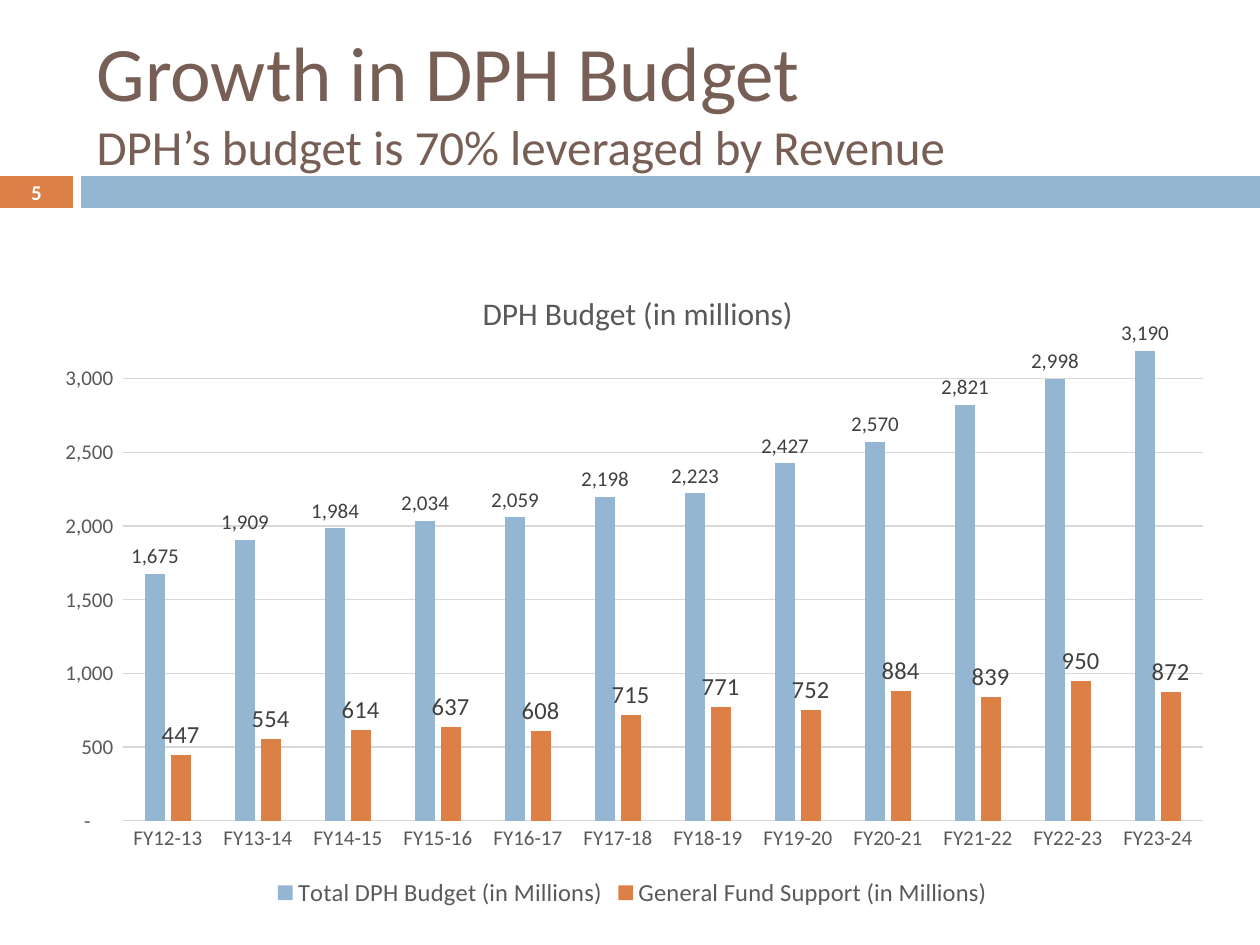
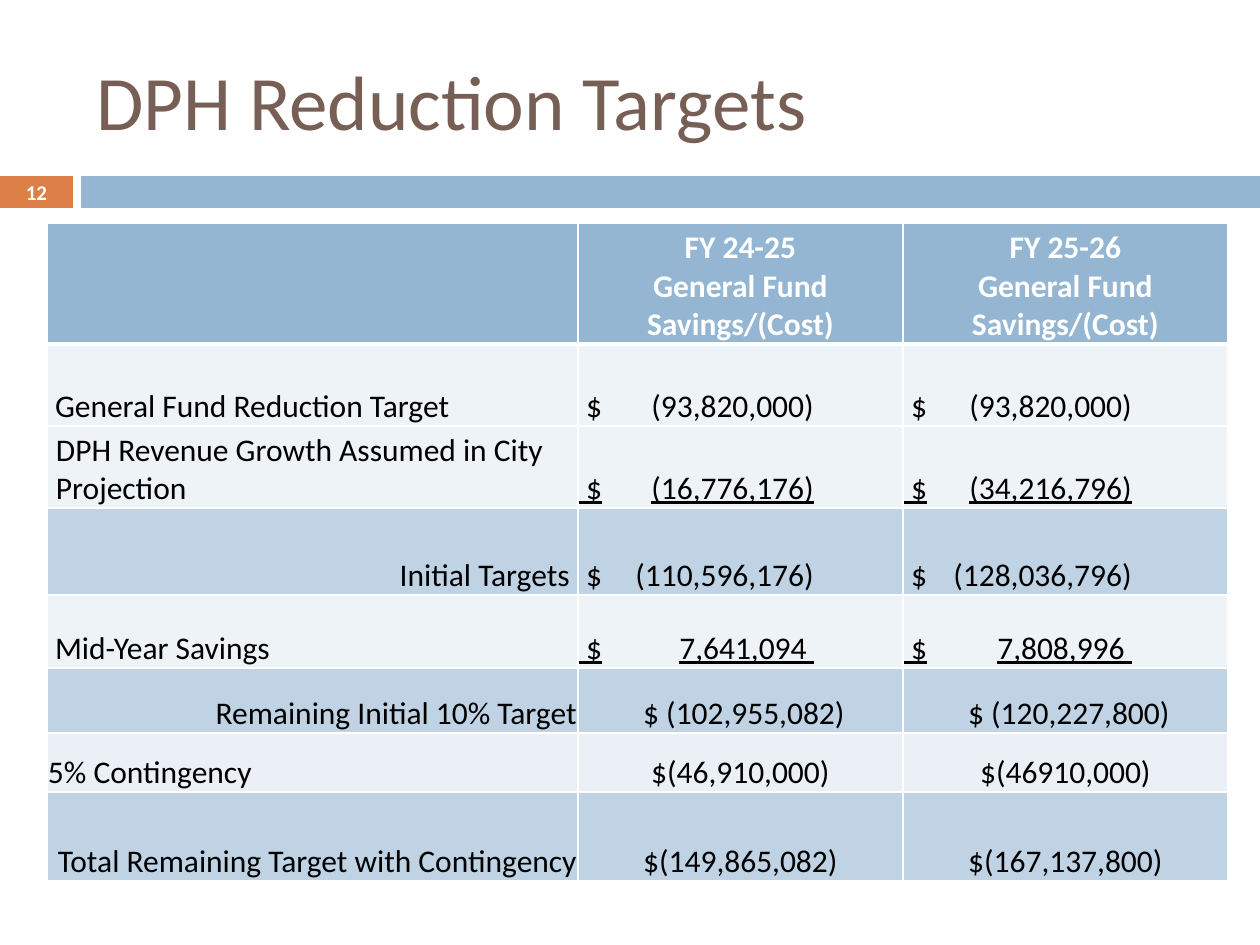
"""Build two budget slides: a growth chart and a table of reduction targets."""
from dataclasses import dataclass

from pptx import Presentation
from pptx.chart.data import CategoryChartData
from pptx.dml.color import RGBColor
from pptx.enum.chart import XL_CHART_TYPE, XL_LABEL_POSITION, XL_LEGEND_POSITION, XL_TICK_MARK
from pptx.enum.shapes import MSO_SHAPE
from pptx.enum.text import MSO_ANCHOR, MSO_AUTO_SIZE, PP_ALIGN
from pptx.oxml import parse_xml
from pptx.oxml.ns import nsdecls, qn
from pptx.util import Emu, Pt


@dataclass(frozen=True)
class Theme:
    font: str = "Calibri"
    blue: str = "94B6D2"
    orange: str = "DD8047"
    brown: str = "775F55"
    white: str = "FFFFFF"
    black: str = "000000"
    grid: str = "D9D9D9"
    gray: str = "595959"
    dark: str = "404040"
    pale: str = "EEF3F7"
    soft: str = "EAF0F6"
    total: str = "BFD3E4"
    title: int = 44
    sub: int = 28
    body: int = 18
    key: int = 14
    small: int = 12


LOOK = Theme()
PX = 9144000 / 1260
WIDE, HIGH = 1260, 945

GROWTH = ("Growth in DPH Budget", "DPH’s budget is 70% leveraged by Revenue")
TARGETS = ("DPH Reduction Targets",)

HEAD = "DPH Budget (in millions)"
FIRST = 12
SERIES = [
    ("Total DPH Budget (in Millions)", LOOK.blue, LOOK.small,
     (1675, 1909, 1984, 2034, 2059, 2198, 2223, 2427, 2570, 2821, 2998, 3190)),
    ("General Fund Support (in Millions)", LOOK.orange, LOOK.key,
     (447, 554, 614, 637, 608, 715, 771, 752, 884, 839, 950, 872)),
]
YEARS = [f"FY{y}-{y + 1}" for y in range(FIRST, FIRST + len(SERIES[0][3]))]
FORMAT = r'_(* #,##0_);_(* \(#,##0\);_(* "-"??_);_(@_)'
CHART = (37, 258, 1191, 655)
PLOT = (123, 342, 1080, 479)
HEAD_AT = (477, 286)

TABLE = (47, 223, 1181, 658)
COLS = (531, 325, 325)
STOPS = (None, 235, 228)
THIN, WIDE_PAD = 1, 9
HEADS = ("", "FY 24-25\vGeneral Fund Savings/(Cost)", "FY 25-26\vGeneral Fund Savings/(Cost)")
ROWS = [
    (121, LOOK.blue, HEADS),
    (82, LOOK.pale, (" General Fund Reduction Target", " $\t(93,820,000)", " $\t(93,820,000)")),
    (82, LOOK.pale, ("DPH Revenue Growth Assumed in City Projection",
                     " $\t(16,776,176)", " $\t(34,216,796)")),
    (87, LOOK.total, (" Initial Targets ", " $\t(110,596,176)", " $\t(128,036,796)")),
    (73, LOOK.pale, (" Mid-Year Savings", " $\t7,641,094 ", " $\t7,808,996 ")),
    (65, LOOK.total, ("Remaining Initial 10% Target", " $ (102,955,082)", " $ (120,227,800)")),
    (59, LOOK.soft, ("5% Contingency", "$(46,910,000)", "$(46910,000)")),
    (89, LOOK.total, ("Total Remaining Target with Contingency",
                      "$(149,865,082)", "$(167,137,800)")),
]
LINED = (2, 4)
PADDED = 2


def px(*sizes):
    return [Emu(round(size * PX)) for size in sizes]


def rgb(code):
    return RGBColor.from_string(code)


def ink(font, size, color, bold=False):
    font.name, font.size, font.bold = LOOK.font, Pt(size), bold
    font.color.rgb = rgb(color)


def band(slide, box, color, text=""):
    bar = slide.shapes.add_shape(MSO_SHAPE.RECTANGLE, *px(*box))
    bar.shadow.inherit = False
    bar.fill.solid()
    bar.fill.fore_color.rgb = rgb(color)
    bar.line.fill.background()
    if text:
        frame = bar.text_frame
        frame.margin_top = frame.margin_bottom = 0
        frame.vertical_anchor = MSO_ANCHOR.MIDDLE
        frame.text = text
        line = frame.paragraphs[0]
        line.alignment = PP_ALIGN.CENTER
        ink(line.runs[0].font, LOOK.small, LOOK.white, True)


def start(deck, lines, number):
    slide = deck.slides.add_slide(deck.slide_layouts[5])
    band(slide, (0, 176, 73, 32), LOOK.orange, str(number))
    band(slide, (81, 176, 1179, 32), LOOK.blue)
    title = slide.shapes.title
    title.left, title.top, title.width, title.height = px(84, 32, 1124, 136)
    frame = title.text_frame
    frame.auto_size = MSO_AUTO_SIZE.NONE
    frame.vertical_anchor = MSO_ANCHOR.MIDDLE
    frame.text = "\v".join(lines)
    head = frame.paragraphs[0]
    head.alignment = PP_ALIGN.LEFT
    for run, size in zip(head.runs, (LOOK.title, LOOK.sub)):
        ink(run.font, size, LOOK.brown)
    return slide


def pin(part, index, box):
    """Fix a chart part at a place given in slide px."""
    for old in part.findall(qn("c:layout")):
        part.remove(old)
    left, top, width, height = CHART
    rates = [(box[0] - left) / width, (box[1] - top) / height]
    rates += [size / whole for size, whole in zip(box[2:], (width, height))]
    inner = '<c:layoutTarget val="inner"/>' if len(box) > 2 else ""
    modes = '<c:xMode val="edge"/><c:yMode val="edge"/>'
    marks = "".join(f'<c:{key} val="{rate:.4f}"/>' for key, rate in zip("xywh", rates))
    part.insert(index, parse_xml(
        f'<c:layout {nsdecls("c")}><c:manualLayout>{inner}{modes}{marks}'
        "</c:manualLayout></c:layout>"))


def rule(line):
    line.color.rgb = rgb(LOOK.grid)
    line.width = Pt(0.75)


def draw_chart(slide):
    data = CategoryChartData(number_format=FORMAT)
    data.categories = YEARS
    for name, _, _, values in SERIES:
        data.add_series(name, values)
    chart = slide.shapes.add_chart(XL_CHART_TYPE.COLUMN_CLUSTERED, *px(*CHART), data).chart
    ink(chart.font, LOOK.small, LOOK.gray)

    chart.has_title = True
    head = chart.chart_title
    head.text_frame.text = HEAD
    ink(head.text_frame.paragraphs[0].runs[0].font, LOOK.body, LOOK.gray)
    head.include_in_layout = False
    pin(head._element, 1, HEAD_AT)

    chart.has_legend = True
    chart.legend.position = XL_LEGEND_POSITION.BOTTOM
    chart.legend.include_in_layout = False
    ink(chart.legend.font, LOOK.key, LOOK.gray)

    years, scale = chart.category_axis, chart.value_axis
    for axis in (years, scale):
        axis.major_tick_mark = axis.minor_tick_mark = XL_TICK_MARK.NONE
        ink(axis.tick_labels.font, LOOK.small, LOOK.gray)
    rule(years.format.line)
    scale.format.line.fill.background()
    scale.minimum_scale, scale.maximum_scale, scale.major_unit = 0, 3250, 500
    scale.tick_labels.number_format = FORMAT
    scale.tick_labels.number_format_is_linked = False
    rule(scale.major_gridlines.format.line)

    plot = chart.plots[0]
    plot.gap_width, plot.overlap, plot.vary_by_categories = 219, -27, False
    for bars, (_, color, size, _) in zip(plot.series, SERIES):
        bars.format.fill.solid()
        bars.format.fill.fore_color.rgb = rgb(color)
        tags = bars.data_labels
        tags.show_value = True
        tags.position = XL_LABEL_POSITION.OUTSIDE_END
        tags.number_format, tags.number_format_is_linked = FORMAT, False
        ink(tags.font, size, LOOK.dark)
    pin(chart._chartSpace.chart.plotArea, 0, PLOT)


def edge(cell, base):
    props = cell._tc.get_or_add_tcPr()
    for side, points in zip("LRTB", (1, 1, 1, base)):
        props.append(parse_xml(
            f'<a:ln{side} {nsdecls("a")} w="{Pt(points)}"><a:solidFill>'
            f'<a:srgbClr val="{LOOK.white}"/></a:solidFill></a:ln{side}>'))


def fill_cell(cell, row, col, color, text):
    edge(cell, 3 if row == 0 else 1)
    cell.fill.solid()
    cell.fill.fore_color.rgb = rgb(color)
    cell.vertical_anchor = MSO_ANCHOR.BOTTOM
    tabbed = "\t" in text
    wide = row == PADDED if col == 0 else row > 0 and not tabbed
    cell.margin_left, cell.margin_right = px(*[WIDE_PAD if wide else THIN] * 2)
    cell.margin_top, cell.margin_bottom = px(0 if wide else THIN, 0)
    cell.text_frame.text = text
    line = cell.text_frame.paragraphs[0]
    if tabbed:
        line.alignment = PP_ALIGN.LEFT
        line._p.get_or_add_pPr().append(parse_xml(
            f'<a:tabLst {nsdecls("a")}><a:tab pos="{px(STOPS[col])[0]}" algn="r"/></a:tabLst>'))
    elif col or row == 0:
        line.alignment = PP_ALIGN.CENTER
    else:
        line.alignment = PP_ALIGN.RIGHT if color == LOOK.total else PP_ALIGN.LEFT
    for run in line.runs:
        ink(run.font, LOOK.body, LOOK.black if row else LOOK.white, row == 0)
        run.font.underline = bool(col) and row in LINED


def draw_table(slide):
    table = slide.shapes.add_table(len(ROWS), len(COLS), *px(*TABLE)).table
    for col, width in zip(table.columns, px(*COLS)):
        col.width = width
    for row, (height, color, texts) in enumerate(ROWS):
        table.rows[row].height = px(height)[0]
        for col, text in enumerate(texts):
            fill_cell(table.cell(row, col), row, col, color, text)


def main():
    deck = Presentation()
    deck.slide_width, deck.slide_height = px(WIDE, HIGH)
    draw_chart(start(deck, GROWTH, 5))
    draw_table(start(deck, TARGETS, 12))
    deck.save("out.pptx")


if __name__ == "__main__":
    main()
